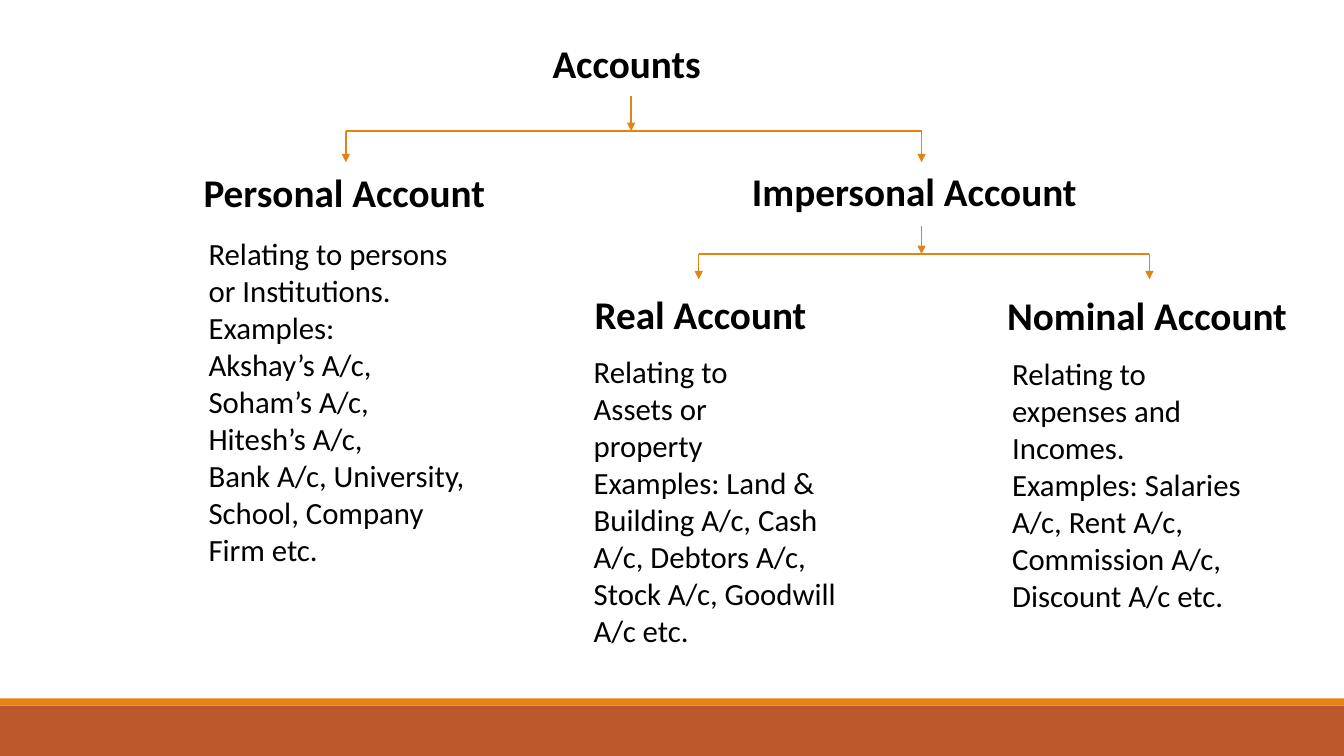
from lxml import etree
from pptx import Presentation
from pptx.dml.color import RGBColor
from pptx.enum.shapes import MSO_CONNECTOR, MSO_SHAPE
from pptx.enum.text import MSO_ANCHOR, MSO_AUTO_SIZE, PP_ALIGN
from pptx.oxml.ns import qn
from pptx.util import Inches, Pt

STRAIGHT = MSO_CONNECTOR.STRAIGHT
RECTANGLE = MSO_SHAPE.RECTANGLE
TOP = MSO_ANCHOR.TOP
LEFT = PP_ALIGN.LEFT
FIXED = MSO_AUTO_SIZE.NONE

RUST = RGBColor(0xBD, 0x58, 0x2C)
ORANGE = RGBColor(0xE4, 0x83, 0x12)
BLACK = RGBColor(0, 0, 0)

WIDTH, HEIGHT = 13.33, 7.5
HEADING_HEIGHT = 0.57
HEADING_SIZE, DETAIL_SIZE = 28, 22
TITLE_ONLY = 5

ACCOUNTS = [
    ((1.92, 1.62, 4.89), (1.97, 2.28, 3.18, 3.43), "Personal Account",
     ["Relating to persons", "or Institutions.", "Examples:", "Akshay’s A/c,",
      "Soham’s A/c,", "Hitesh’s A/c,", "Bank A/c, University,",
      "School, Company", "Firm etc."]),
    ((7.36, 1.61, 4.51), None, "Impersonal Account", []),
    ((5.8, 2.83, 2.75), (5.79, 3.45, 2.75, 3.1), "Real Account",
     ["Relating to", "Assets or", "property",
      "Examples: Land & Building A/c, Cash A/c, Debtors A/c, "
      "Stock A/c, Goodwill A/c etc."]),
    ((9.89, 2.84, 3.44), (9.94, 3.47, 2.75, 2.69), "Nominal Account",
     ["Relating to", "expenses and Incomes.",
      "Examples: Salaries A/c, Rent A/c, Commission A/c, Discount A/c etc."]),
]


def write(frame, lines, size, bold=False):
    """Fill a text frame with left-aligned paragraphs."""
    frame.word_wrap = True
    frame.auto_size = FIXED
    frame.vertical_anchor = TOP
    frame.text = "\n".join(lines)
    for paragraph in frame.paragraphs:
        paragraph.alignment = LEFT
        paragraph.font.name = "Calibri"
        paragraph.font.size = Pt(size)
        paragraph.font.bold = bold
        paragraph.font.color.rgb = BLACK


def add_text(slide, box, lines, size, bold=False):
    """Add a text box at the given left, top, width and height."""
    textbox = slide.shapes.add_textbox(*map(Inches, box))
    write(textbox.text_frame, lines, size, bold)


def add_account(slide, heading_box, detail_box, heading, details):
    """Add an account's heading and the details below it."""
    add_text(slide, (*heading_box, HEADING_HEIGHT), [heading], HEADING_SIZE, True)
    if details:
        add_text(slide, detail_box, details, DETAIL_SIZE)


def add_line(slide, start, end, arrow=False):
    """Draw a thin orange line, with an arrowhead at its end if asked."""
    line = slide.shapes.add_connector(STRAIGHT, *map(Inches, (*start, *end)))
    line.line.color.rgb = ORANGE
    line.line.width = Pt(1)
    if arrow:
        etree.SubElement(line.line._get_or_add_ln(), qn("a:tailEnd"), type="triangle")
    etree.SubElement(line._element.spPr, qn("a:effectLst"))


def add_branch(slide, stem, left, right, top, bar, bottom):
    """Draw a stem that splits at a bar into two downward arrows."""
    add_line(slide, (stem, top), (stem, bar), True)
    add_line(slide, (left, bar), (right, bar))
    for child in (left, right):
        add_line(slide, (child, bar), (child, bottom), True)


def add_footer(slide):
    """Draw the two coloured bands along the bottom edge."""
    for top, height, color in ((7, 0.5, RUST), (6.93, 0.07, ORANGE)):
        band = slide.shapes.add_shape(
            RECTANGLE, 0, Inches(top), Inches(WIDTH), Inches(height))
        band.shadow.inherit = False
        band.fill.solid()
        band.fill.fore_color.rgb = color
        band.line.fill.background()


def add_title(slide, box):
    """Place the root of the account tree in the title placeholder."""
    title = slide.shapes.title
    title.left, title.top, title.width, title.height = map(Inches, box)
    write(title.text_frame, ["Accounts"], HEADING_SIZE, True)


def main():
    """Build the chart of account types."""
    deck = Presentation()
    deck.slide_width, deck.slide_height = Inches(WIDTH), Inches(HEIGHT)
    slide = deck.slides.add_slide(deck.slide_layouts[TITLE_ONLY])
    add_footer(slide)
    add_title(slide, (5.38, 0.34, 2.93, HEADING_HEIGHT))
    for account in ACCOUNTS:
        add_account(slide, *account)
    add_branch(slide, stem=6.26, left=3.43, right=9.14, top=0.95, bar=1.3, bottom=1.61)
    add_branch(slide, stem=9.14, left=6.93, right=11.4, top=2.24, bar=2.52, bottom=2.77)
    deck.save("out.pptx")


if __name__ == "__main__":
    main()
